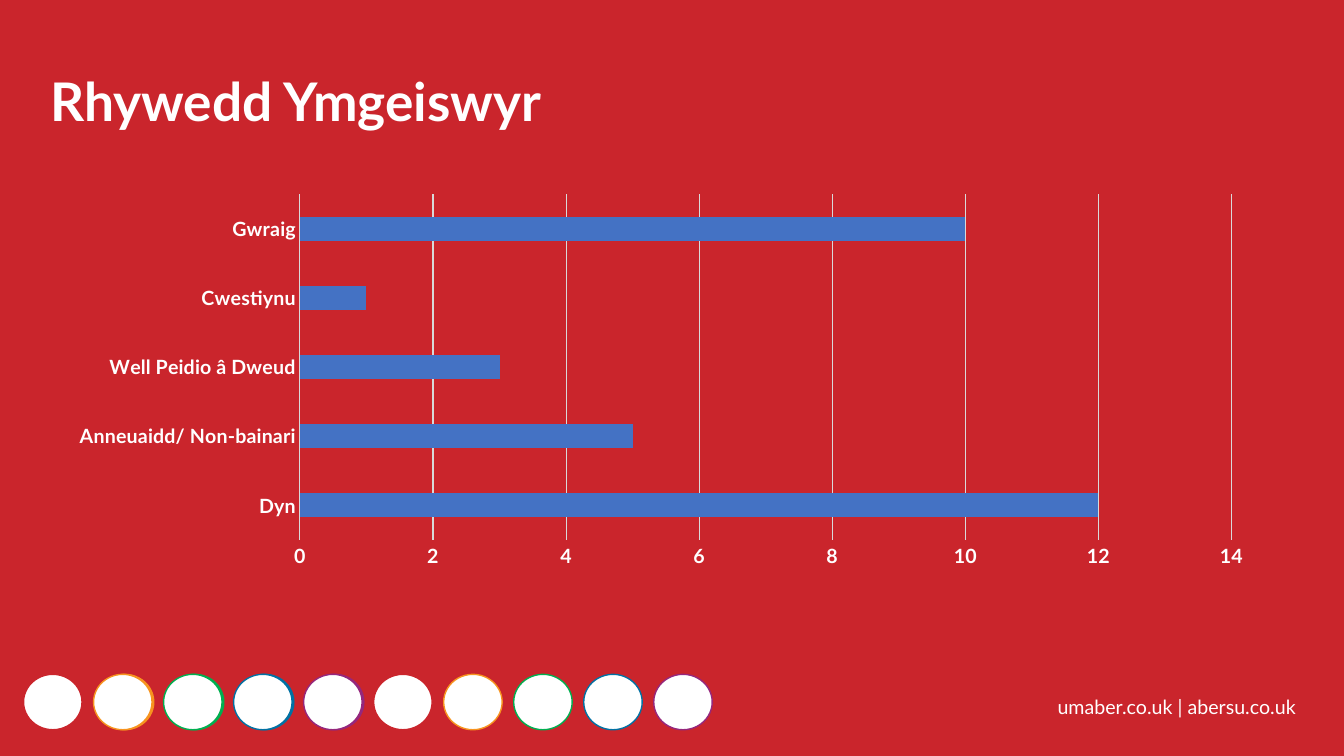
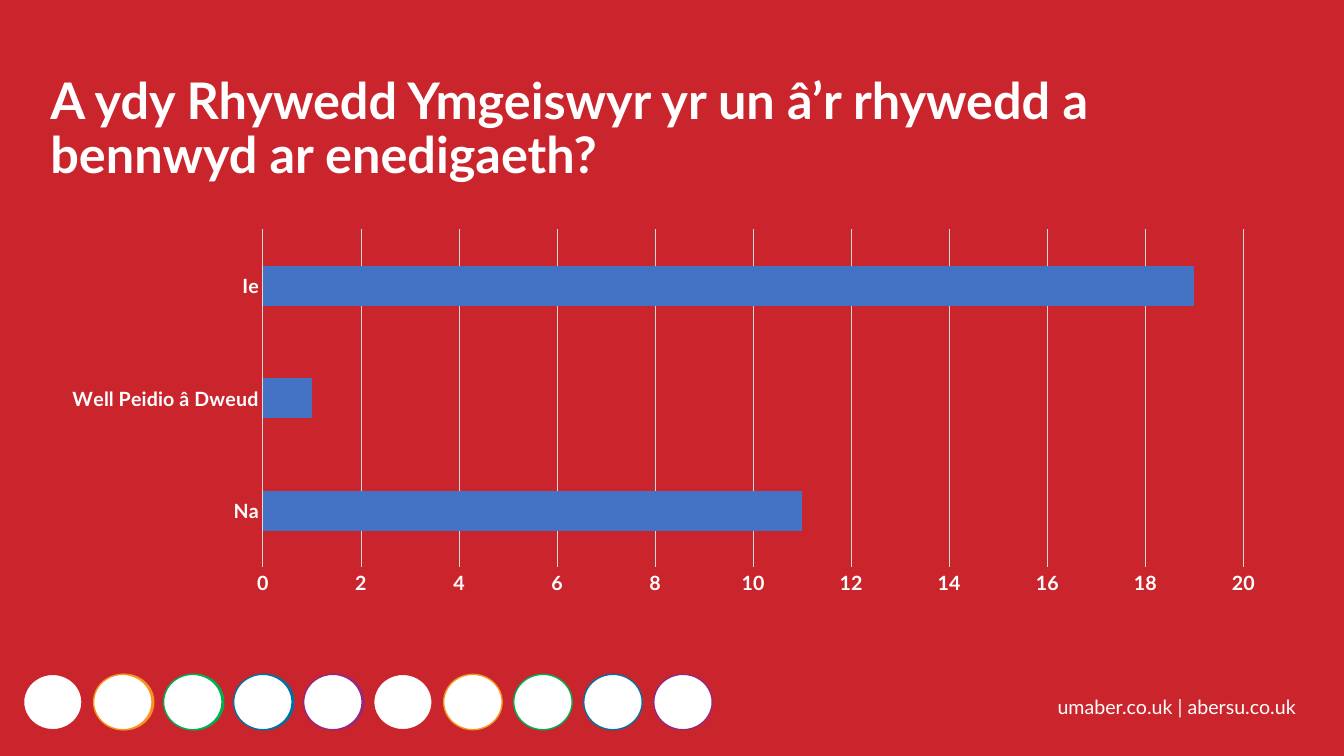
"""Build two slides with bar charts on the gender of candidates."""
from lxml import etree
from pptx import Presentation
from pptx.chart.data import CategoryChartData
from pptx.dml.color import RGBColor
from pptx.enum.chart import XL_CHART_TYPE as ChartType, XL_TICK_MARK as TickMark
from pptx.enum.shapes import MSO_SHAPE as Shape
from pptx.enum.text import MSO_ANCHOR as Anchor, MSO_AUTO_SIZE as AutoSize, PP_ALIGN as Align
from pptx.oxml.ns import qn
from pptx.util import Inches, Pt

RED = RGBColor(0xCA, 0x25, 0x2C)
ORANGE = RGBColor(0xF7, 0x94, 0x1F)
GREEN = RGBColor(0x00, 0xAF, 0x50)
TEAL = RGBColor(0x01, 0x71, 0xA3)
PURPLE = RGBColor(0x95, 0x27, 0x7D)
BLUE = RGBColor(0x44, 0x72, 0xC4)
GREY = RGBColor(0xD9, 0xD9, 0xD9)
WHITE = RGBColor(0xFF, 0xFF, 0xFF)
RING_COLORS = [RED, ORANGE, GREEN, TEAL, PURPLE]
FONT = "Lato"

SLIDE_WIDTH, SLIDE_HEIGHT = Inches(13.33), Inches(7.5)
COLUMN, ROW = SLIDE_WIDTH / 100, SLIDE_HEIGHT / 100
RING_PITCH = 5.21

SLIDES = [
    {
        "title": "Rhywedd Ymgeiswyr",
        "size": 38,
        "area": (4.13, 24.67, 90.17, 51.47),
        "plot": None,
        "maximum": 14,
        "values": {
            "Dyn": 12,
            "Anneuaidd/ Non-bainari": 5,
            "Well Peidio â Dweud": 3,
            "Cwestiynu": 1,
            "Gwraig": 10,
        },
    },
    {
        "title": "A ydy Rhywedd Ymgeiswyr yr un â’r rhywedd a bennwyd ar enedigaeth?",
        "size": 36,
        "area": (5.33, 28.27, 88.97, 52.53),
        "plot": {"x": 0.16, "y": 0.04, "w": 0.82, "h": 0.85},
        "maximum": 20,
        "values": {"Na": 11, "Well Peidio â Dweud": 1, "Ie": 19},
    },
]


def place(left, top, width, height):
    """Turn columns and rows of the grid into slide lengths."""
    return round(left * COLUMN), round(top * ROW), round(width * COLUMN), round(height * ROW)


def style_font(font, size, bold):
    """Apply the shared white typeface."""
    font.name = FONT
    font.size = Pt(size)
    font.bold = bold
    font.color.rgb = WHITE


presentation = Presentation()
presentation.slide_width, presentation.slide_height = SLIDE_WIDTH, SLIDE_HEIGHT
background = presentation.slide_master.background.fill
background.solid()
background.fore_color.rgb = RED

layout = presentation.slide_layouts.get_by_name("Title Only")
for placeholder in list(layout.placeholders):
    if placeholder.placeholder_format.idx:
        placeholder.element.getparent().remove(placeholder.element)
    else:
        (placeholder.left, placeholder.top,
         placeholder.width, placeholder.height) = place(3, 9.33, 85.67, 11.73)

slides = [presentation.slides.add_slide(layout) for _ in SLIDES]

drawing = slides[0].shapes
rings = [(1.88 + index * RING_PITCH, color, color) for index, color in enumerate(RING_COLORS)]
rings += [(1.75 + index * RING_PITCH, WHITE, color) for index, color in enumerate(RING_COLORS * 2)]
footer_shapes = []
for left, fill_color, line_color in rings:
    ring = drawing.add_shape(Shape.OVAL, *place(left, 89.2, 4.35, 7.33))
    ring.shadow.inherit = False
    ring.fill.solid()
    ring.fill.fore_color.rgb = fill_color
    ring.line.color.rgb = line_color
    ring.line.width = Pt(1)
    footer_shapes.append(ring)

footer = drawing.add_textbox(*place(77.95, 91.2, 21, 4.53))
footer.text_frame.word_wrap = True
run = footer.text_frame.paragraphs[0].add_run()
run.text = "umaber.co.uk | abersu.co.uk"
style_font(run.font, 14, False)
footer_shapes.append(footer)

for shape in footer_shapes:
    layout.shapes.element.append(shape.element)

for slide, content in zip(slides, SLIDES):
    title_frame = slide.shapes.title.text_frame
    title_frame.auto_size = AutoSize.NONE
    title_frame.vertical_anchor = Anchor.TOP
    paragraph = title_frame.paragraphs[0]
    paragraph.alignment = Align.LEFT
    paragraph.line_spacing = 0.9
    run = paragraph.add_run()
    run.text = content["title"]
    style_font(run.font, content["size"], True)

    chart_data = CategoryChartData()
    chart_data.categories = content["values"].keys()
    chart_data.add_series("Series 1", content["values"].values())
    chart = slide.shapes.add_chart(
        ChartType.BAR_CLUSTERED, *place(*content["area"]), chart_data).chart
    chart.has_title = False
    chart.has_legend = False
    style_font(chart.font, 14, True)

    plot = chart.plots[0]
    plot.gap_width = 182
    plot.vary_by_categories = False
    bar_fill = plot.series[0].format.fill
    bar_fill.solid()
    bar_fill.fore_color.rgb = BLUE

    category_axis, value_axis = chart.category_axis, chart.value_axis
    for axis in (category_axis, value_axis):
        axis.major_tick_mark = axis.minor_tick_mark = TickMark.NONE
    value_axis.minimum_scale = 0
    value_axis.maximum_scale = content["maximum"]
    value_axis.major_unit = 2
    value_axis.has_major_gridlines = True
    value_axis.format.line.fill.background()
    for line in (category_axis.format.line, value_axis.major_gridlines.format.line):
        line.color.rgb = GREY
        line.width = Pt(0.75)

    if content["plot"]:
        plot_area = chart.element.find(".//" + qn("c:plotArea"))
        for old_layout in plot_area.findall(qn("c:layout")):
            plot_area.remove(old_layout)
        plot_layout = etree.Element(qn("c:layout"))
        manual = etree.SubElement(plot_layout, qn("c:manualLayout"))
        settings = {"layoutTarget": "inner", "xMode": "edge", "yMode": "edge", **content["plot"]}
        for name, value in settings.items():
            etree.SubElement(manual, qn("c:" + name)).set("val", str(value))
        plot_area.insert(0, plot_layout)

presentation.save("out.pptx")
